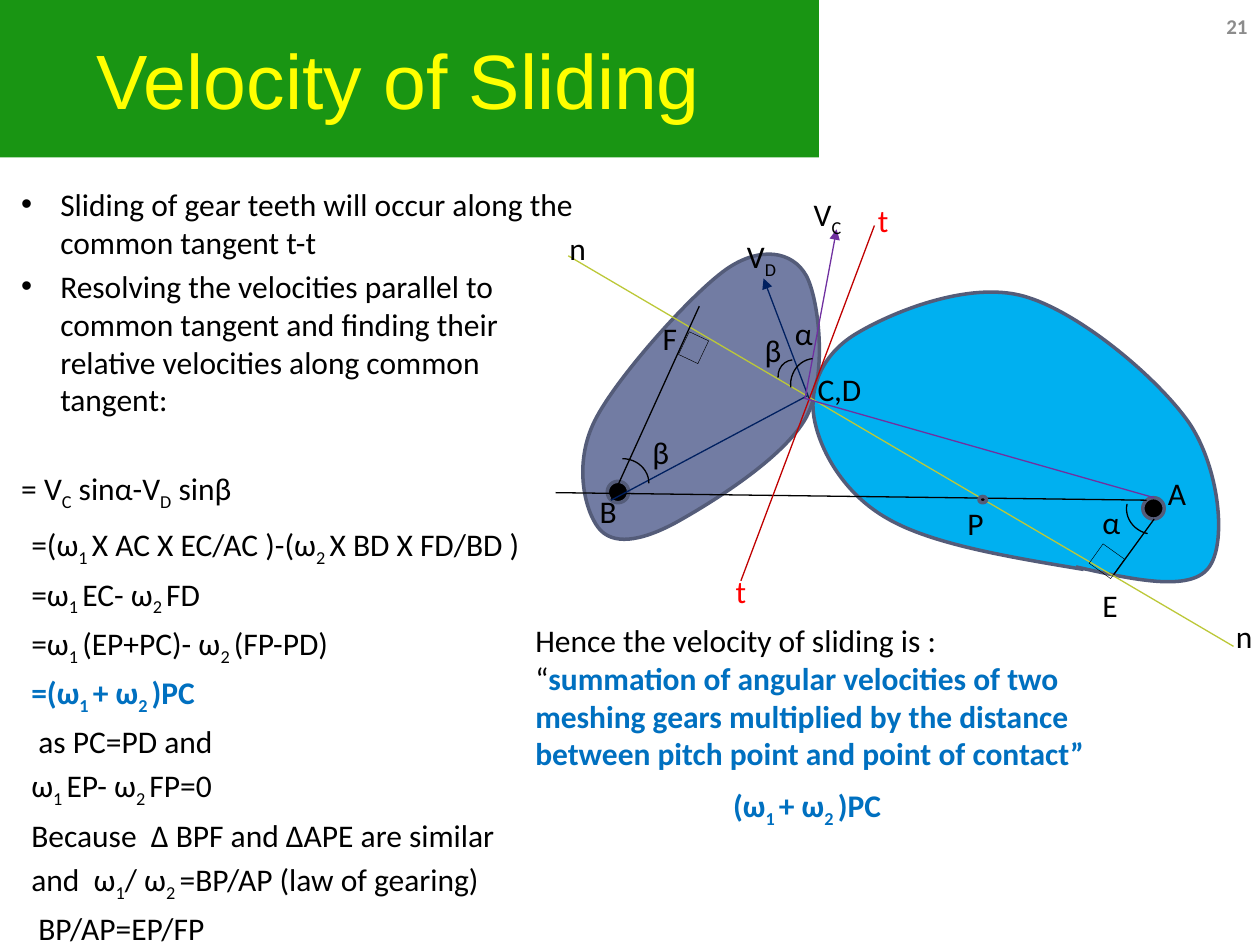
from dataclasses import dataclass

from lxml.etree import SubElement
from pptx import Presentation
from pptx.dml.color import RGBColor
from pptx.enum.shapes import MSO_CONNECTOR, MSO_SHAPE
from pptx.enum.text import MSO_ANCHOR, PP_ALIGN
from pptx.oxml.ns import qn
from pptx.util import Inches, Pt


@dataclass(frozen=True)
class Theme:
    black: str = "000000"
    green: str = "199513"
    yellow: str = "FFFF00"
    gray: str = "8C8C8C"
    slate: str = "727CA3"
    sky: str = "00B0F0"
    outline: str = "545C79"
    lime: str = "BCC838"
    crimson: str = "C00000"
    red: str = "FF0000"
    navy: str = "002060"
    purple: str = "7030A0"
    accent: str = "0070C0"
    title_font: str = "Arial"
    body_font: str = "Calibri"
    title_size: float = 44
    body_size: float = 18
    number_size: float = 12


theme = Theme()
CELL = Inches(1)  # the page is a grid of 10 columns by 7.5 rows


def write_text(shape, text, size=theme.body_size, color=theme.black, font=theme.body_font,
               bold=False, align=PP_ALIGN.LEFT, anchor=MSO_ANCHOR.TOP, wrap=True,
               before=0, gap=0):
    """Each line is a paragraph, bulleted if it starts with •; gap opens the line after bullets.

    _Marks_ enclose subscripts, *marks* enclose bold accent text.
    """
    frame = shape.text_frame
    frame.word_wrap = wrap
    frame.vertical_anchor = anchor
    after_bullet = False
    for index, line in enumerate(text.split("\n")):
        para = frame.add_paragraph() if index else frame.paragraphs[0]
        para.alignment = align
        bullet = line.startswith("•")
        if index:
            para.space_before = Pt(gap if after_bullet and not bullet else before)
        after_bullet = bullet
        if bullet:
            properties = para._p.get_or_add_pPr()
            properties.set("marL", str(Inches(0.31)))
            properties.set("indent", str(-Inches(0.31)))
            SubElement(properties, qn("a:buFont")).set("typeface", "Arial")
            SubElement(properties, qn("a:buChar")).set("char", "•")
        for strong, part in enumerate(line.removeprefix("•").split("*")):
            for lowered, piece in enumerate(part.split("_")):
                if not piece:
                    continue
                span = para.add_run()
                span.text = piece
                span.font.name = font
                span.font.size = Pt(size)
                span.font.bold = bold or strong % 2 == 1
                span.font.color.rgb = RGBColor.from_string(theme.accent if strong % 2 else color)
                if lowered % 2:
                    span._r.get_or_add_rPr().set("baseline", "-25000")


def draw_shape(shapes, preset, at, fill=None, line=None, width=0.75, rotation=0):
    shape = shapes.add_shape(preset, *[int(value * CELL) for value in at])
    shape.shadow.inherit = False
    shape.rotation = rotation
    if fill:
        shape.fill.solid()
        shape.fill.fore_color.rgb = RGBColor.from_string(fill)
    else:
        shape.fill.background()
    if line:
        shape.line.color.rgb = RGBColor.from_string(line)
        shape.line.width = Pt(width)
    else:
        shape.line.fill.background()
    return shape


deck = Presentation()
deck.slide_width, deck.slide_height = 10 * CELL, int(7.5 * CELL)
page = deck.slides.add_slide(deck.slide_layouts[6])

# Title and page number
banner = draw_shape(page.shapes, MSO_SHAPE.RECTANGLE, (0, 0, 6.5, 1.25), fill=theme.green)
write_text(banner, "Velocity of Sliding ", size=theme.title_size, color=theme.yellow,
           font=theme.title_font, align=PP_ALIGN.CENTER, anchor=MSO_ANCHOR.MIDDLE)

# Text blocks
explanation = """•Sliding of gear teeth will occur along the common tangent t-t
•Resolving the velocities parallel to common tangent and finding their relative \
velocities along common tangent:
= V_C_ sinα-V_D_ sinβ"""
derivation = """=(ω_1 _X AC X EC/AC )-(ω_2 _X BD X FD/BD )
=ω_1 _EC- ω_2 _FD
=ω_1 _(EP+PC)- ω_2 _(FP-PD)
*=(ω_1 _+ ω_2 _)PC*
 as PC=PD and
ω_1 _EP- ω_2 _FP=0
Because  Δ BPF and ΔAPE are similar
and  ω_1_/ ω_2 _=BP/AP (law of gearing)
 BP/AP=EP/FP"""
conclusion = """Hence the velocity of sliding is :
“*summation of angular velocities of two meshing gears multiplied by the distance \
between pitch point and point of contact”*"""
blocks = [
    ((0.07, 1.42, 4.68, 3.02), explanation, dict(before=3.6, gap=29)),
    ((9.08, 0, 0.92, 0.42), "21", dict(size=theme.number_size, color=theme.gray, bold=True,
                                       align=PP_ALIGN.RIGHT, anchor=MSO_ANCHOR.MIDDLE)),
    ((0.15, 4.12, 4.25, 2.27), derivation, dict(before=3.6)),
    ((4.15, 4.88, 4.56, 1.31), conclusion, {}),
    ((5.72, 6.19, 1.41, 0.4), "*(ω_1 _+ ω_2 _)PC*", dict(wrap=False)),
]
for at, text, style in blocks:
    box = page.shapes.add_textbox(*[int(value * CELL) for value in at])
    write_text(box, text, **style)

# Gear bodies: a start point, then cubic curves of two handles and an end point
diagram = page.shapes.add_group_shape().shapes
bodies = [
    (theme.slate, True, (5.36, 4.15), [
        (5.63, 4), (6.22, 3.64), (6.4, 3.31), (6.57, 2.98), (6.5, 2.38), (6.4, 2.19),
        (6.29, 1.99), (6.03, 1.95), (5.76, 2.14), (5.48, 2.34), (4.89, 3), (4.72, 3.34),
        (4.55, 3.68), (4.64, 4.05), (4.75, 4.19), (4.86, 4.33), (5.08, 4.3), (5.36, 4.15)]),
    (theme.sky, False, (8.54, 4.5), [
        (8.99, 4.6), (9.44, 4.7), (9.59, 4.51), (9.74, 4.32), (9.68, 3.72), (9.44, 3.36),
        (9.19, 3), (8.56, 2.47), (8.12, 2.35), (7.68, 2.23), (7.08, 2.48), (6.81, 2.64),
        (6.53, 2.8), (6.42, 3.07), (6.46, 3.31), (6.5, 3.56), (6.69, 3.92), (7.05, 4.12),
        (7.4, 4.32), (8, 4.42), (8.6, 4.52)]),
]
for fill, closed, start, points in bodies:
    builder = diagram.build_freeform(*[int(value * CELL) for value in start])
    builder.add_line_segments([(int(x * CELL), int(y * CELL)) for x, y in points], close=closed)
    body = builder.convert_to_shape()
    # Every three straight segments become one cubic curve
    segments = list(body._element.iter(qn("a:lnTo")))
    for curve, *others in zip(segments[::3], segments[1::3], segments[2::3]):
        curve.tag = qn("a:cubicBezTo")
        for segment in others:
            curve.append(segment[0])
            segment.getparent().remove(segment)
    body.shadow.inherit = False
    body.fill.solid()
    body.fill.fore_color.rgb = RGBColor.from_string(fill)
    body.line.color.rgb = RGBColor.from_string(theme.outline)
    body.line.width = Pt(2)

for pivot in [(4.82, 3.82), (9.07, 3.95)]:
    draw_shape(diagram, MSO_SHAPE.OVAL, (*pivot, 0.17, 0.17), theme.black, theme.outline, 2)

# Lines: ends, colour, arrowhead
lines = [
    ((4.41, 3.91, 9.1, 3.97), theme.black, False),
    ((4.51, 2.03, 9.79, 5.13), theme.lime, False),
    ((4.85, 3.97, 5.55, 2.43), theme.black, False),
    ((9.16, 4.12, 8.84, 4.56), theme.black, False),
    ((6.94, 1.79, 5.88, 4.61), theme.crimson, False),
    ((4.85, 3.97, 6.41, 3.14), theme.navy, False),
    ((6.42, 3.16, 6.06, 2.21), theme.navy, True),
    ((9.16, 3.95, 6.38, 3.16), theme.purple, False),
    ((6.39, 3.16, 6.64, 1.82), theme.purple, True),
]
for ends, color, arrow in lines:
    line = diagram.add_connector(MSO_CONNECTOR.STRAIGHT, *[int(value * CELL) for value in ends])
    line.line.color.rgb = RGBColor.from_string(color)
    line.line.width = Pt(0.75)
    if arrow:
        SubElement(line.line._get_or_add_ln(), qn("a:tailEnd")).set("type", "triangle")
    SubElement(line._element.spPr, qn("a:effectLst"))

# Pitch point, angle arcs and right angles
draw_shape(diagram, MSO_SHAPE.OVAL, (7.77, 3.94, 0.06, 0.05), theme.black, theme.outline, 2)
angles = [
    (MSO_SHAPE.ARC, (4.73, 3.64, 0.42, 0.39), 0, 0.75),
    (MSO_SHAPE.ARC, (8.94, 3.85, 0.42, 0.39), 192.5, 0.75),
    (MSO_SHAPE.ARC, (6.17, 2.86, 0.26, 0.25), 264.8, 0.75),
    (MSO_SHAPE.ARC, (6.26, 2.86, 0.42, 0.39), 264.5, 0.75),
    (MSO_SHAPE.RECTANGLE, (5.42, 2.66, 0.17, 0.2), 25.3, 0.25),
    (MSO_SHAPE.RECTANGLE, (8.68, 4.36, 0.21, 0.19), 35.5, 0.25),
]
for preset, at, rotation, width in angles:
    draw_shape(diagram, preset, at, line=theme.black, width=width, rotation=rotation)

labels = [
    ("n", 9.71, 4.85, 0.32), ("n", 4.42, 1.77, 0.32), ("t", 6.87, 1.55, 0.56),
    ("t", 5.74, 4.49, 0.32), ("V_D_", 5.83, 1.83, 0.51), ("V_C_", 6.36, 1.5, 0.46),
    ("A", 9.17, 3.71, 0.32), ("E", 8.65, 4.6, 0.32), ("P", 7.58, 3.95, 0.32),
    ("C,D", 6.39, 2.89, 1.04), ("B", 4.66, 3.86, 0.32), ("F", 5.16, 2.48, 0.32),
    ("α", 8.65, 3.94, 0.32), ("β", 5.08, 3.39, 0.32), ("β", 5.97, 2.58, 0.32),
    ("α", 6.21, 2.44, 0.32),
]
for text, *at in labels:
    label = diagram.add_textbox(*[int(value * CELL) for value in (*at, 0.4)])
    write_text(label, text, color=theme.red if text == "t" else theme.black)

deck.save("out.pptx")
